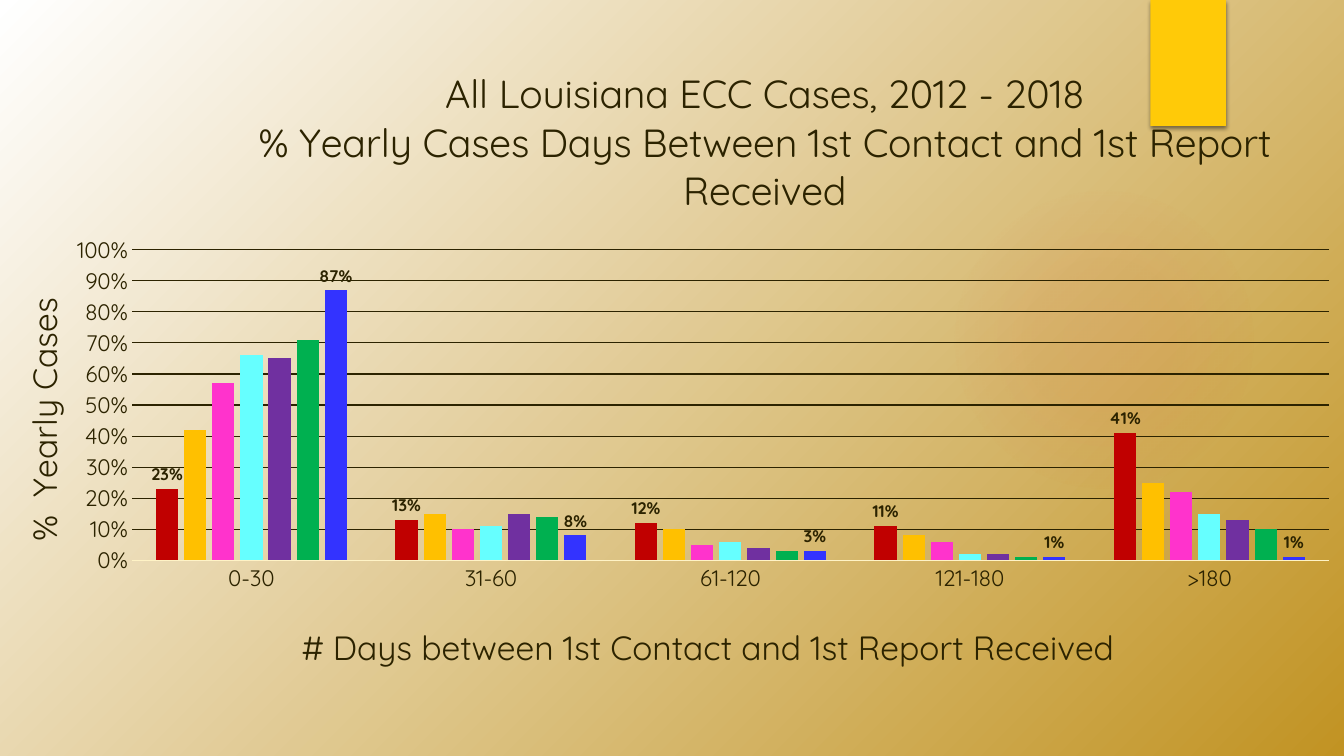
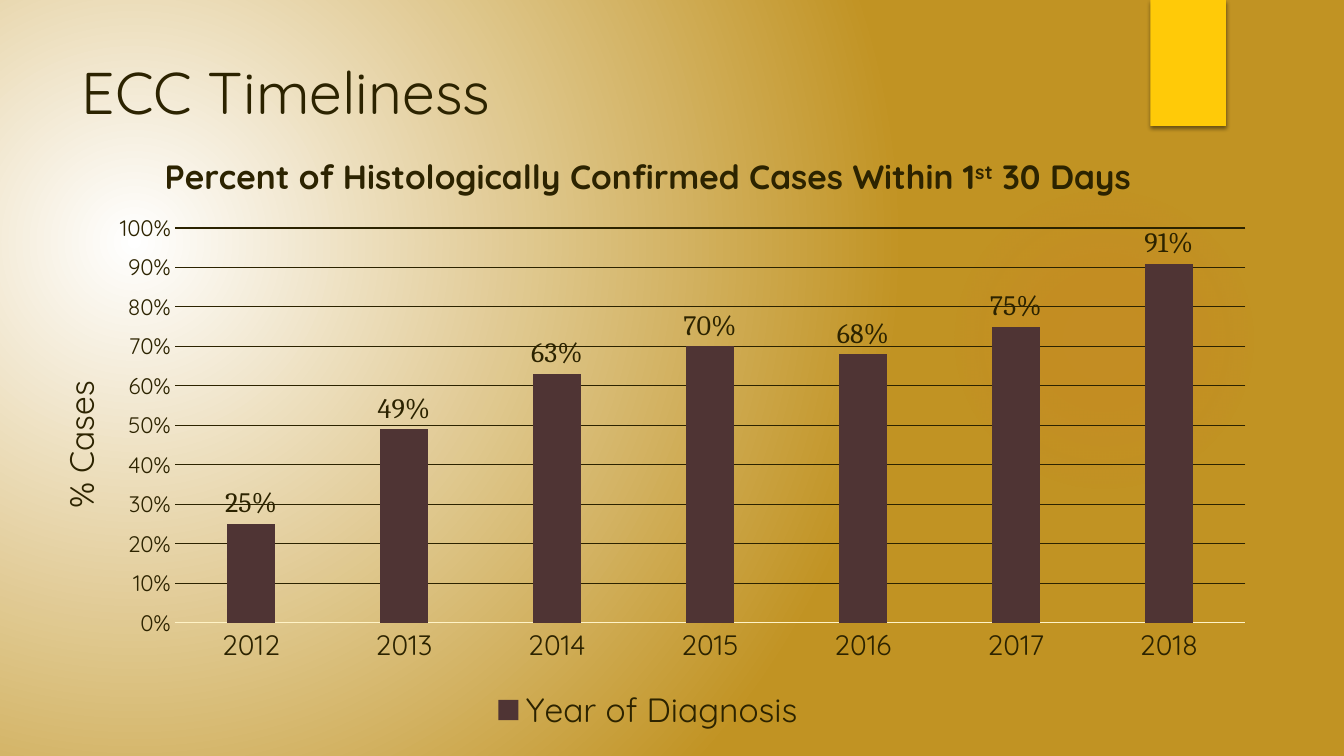
from dataclasses import dataclass
from typing import Optional

from lxml.etree import _Element
from pptx import Presentation
from pptx.chart.axis import _BaseAxis
from pptx.chart.data import CategoryChartData
from pptx.chart.series import BarSeries
from pptx.dml.color import RGBColor
from pptx.enum.chart import XL_CHART_TYPE, XL_LABEL_POSITION, XL_LEGEND_POSITION, XL_TICK_MARK
from pptx.enum.shapes import MSO_SHAPE
from pptx.enum.text import MSO_ANCHOR, PP_ALIGN
from pptx.oxml import parse_xml
from pptx.oxml.ns import nsdecls, qn
from pptx.slide import Slide
from pptx.text.text import Font, TextFrame
from pptx.util import Inches, Pt

FONT = "Quicksand"
LABEL_FONT = "Cambria"
INK = RGBColor(0x2C, 0x23, 0x00)
WHITE = RGBColor(0xFF, 0xFF, 0xFF)
GOLD = RGBColor(0xC1, 0x93, 0x23)
YELLOW = RGBColor(0xFF, 0xCA, 0x08)
GLOW = RGBColor(0xE6, 0x48, 0x23)
AXIS_LINE = RGBColor(0xFF, 0xF3, 0xC6)
BROWN = RGBColor(0x4F, 0x34, 0x34)
RED = RGBColor(0xC0, 0x00, 0x00)
AMBER = RGBColor(0xFF, 0xC0, 0x00)
PINK = RGBColor(0xFF, 0x33, 0xCC)
CYAN = RGBColor(0x66, 0xFF, 0xFF)
PURPLE = RGBColor(0x70, 0x30, 0xA0)
GREEN = RGBColor(0x00, 0xB0, 0x50)
BLUE = RGBColor(0x33, 0x33, 0xFF)

DIAGONAL = '<a:lin ang="2700000" scaled="0"/>'


@dataclass(frozen=True)
class Span:
    text: str
    superscript: bool = False


@dataclass(frozen=True)
class LabelStyle:
    size: int
    bold: bool = False
    font: str = FONT


@dataclass(frozen=True)
class YearSeries:
    name: str
    values: tuple[float, ...]
    color: RGBColor
    labels: Optional[LabelStyle] = None


@dataclass(frozen=True)
class Heading:
    """Lines of spans, with an optional top-left corner as chart fractions."""
    lines: tuple[tuple[Span, ...], ...]
    size: int = 24
    bold: bool = False
    corner: Optional[tuple[float, float]] = None


@dataclass(frozen=True)
class ColumnChart:
    frame: tuple[float, float, float, float]
    plot: tuple[float, float, float, float]
    categories: tuple[str, ...]
    series: tuple[YearSeries, ...]
    title: Heading
    value_title: Heading
    category_size: int
    category_title: Optional[Heading] = None
    legend_size: Optional[int] = None


BOLD_LABELS = LabelStyle(12, bold=True)
CONTACT_CHART = ColumnChart(
    frame=(0, 0.58, 13.33, 6.44),
    plot=(0.098, 0.295, 0.891, 0.478),
    categories=("0-30", "31-60", "61-120", "121-180", ">180"),
    series=(
        YearSeries("2012", (0.23, 0.13, 0.12, 0.11, 0.41), RED, BOLD_LABELS),
        YearSeries("2013", (0.42, 0.15, 0.1, 0.08, 0.25), AMBER),
        YearSeries("2014", (0.57, 0.1, 0.05, 0.06, 0.22), PINK),
        YearSeries("2015", (0.66, 0.11, 0.06, 0.02, 0.15), CYAN),
        YearSeries("2016", (0.65, 0.15, 0.04, 0.02, 0.13), PURPLE),
        YearSeries("2017", (0.71, 0.14, 0.03, 0.01, 0.1), GREEN),
        YearSeries("2018", (0.87, 0.08, 0.03, 0.01, 0.01), BLUE, BOLD_LABELS),
    ),
    title=Heading(
        ((Span("All Louisiana ECC Cases, 2012 - 2018"),),
         (Span("% Yearly Cases Days Between 1st Contact and 1st Report Received"),)),
        size=28, corner=(0.19, 0.01),
    ),
    value_title=Heading(((Span("%  Yearly Cases"),),), corner=(0.01, 0.36)),
    category_size=16,
    category_title=Heading(
        ((Span("# Days between 1st Contact and 1st Report Received"),),), corner=(0.22, 0.86)
    ),
)
TIMELINESS_CHART = ColumnChart(
    frame=(0.25, 1.32, 12.35, 6),
    plot=(0.12, 0.157, 0.86, 0.653),
    categories=tuple(str(year) for year in range(2012, 2019)),
    series=(
        YearSeries("Year of Diagnosis", (0.25, 0.49, 0.63, 0.7, 0.68, 0.75, 0.91),
                   BROWN, LabelStyle(20, font=LABEL_FONT)),
    ),
    title=Heading(
        ((Span("Percent of Histologically Confirmed Cases Within 1"),
          Span("st", superscript=True), Span(" 30 Days")),),
        bold=True,
    ),
    value_title=Heading(((Span("% Cases"),),), corner=(0.02, 0.4)),
    category_size=20,
    legend_size=24,
)


def circle_path(left: int, top: int, right: int, bottom: int) -> str:
    """Radial gradient whose focus is given by percent insets."""
    return (f'<a:path path="circle"><a:fillToRect l="{left * 1000}" t="{top * 1000}" '
            f'r="{right * 1000}" b="{bottom * 1000}"/></a:path>')


def gradient(stops: list[tuple[int, RGBColor, int]], direction: str) -> _Element:
    """Gradient fill from (position, colour, opacity) stops, in percent."""
    marks = "".join(
        f'<a:gs pos="{position * 1000}"><a:srgbClr val="{color}">'
        f'<a:alpha val="{opacity * 1000}"/></a:srgbClr></a:gs>'
        for position, color, opacity in stops
    )
    return parse_xml(f'<a:gradFill {nsdecls("a")} rotWithShape="1">'
                     f'<a:gsLst>{marks}</a:gsLst>{direction}</a:gradFill>')


def replace_solid_fill(parent: _Element, fill: _Element) -> None:
    parent.replace(parent.find(qn("a:solidFill")), fill)


def decorate(page: Slide, direction: str) -> None:
    """Draw the shared background, glow and yellow tab."""
    page.background.fill.solid()
    background = page._element.find(f".//{qn('p:bgPr')}")
    replace_solid_fill(background, gradient([(0, WHITE, 100), (100, GOLD, 100)], direction))

    glow = page.shapes.add_shape(
        MSO_SHAPE.OVAL, Inches(9.41), Inches(1.83), Inches(3.08), Inches(3.08))
    glow.shadow.inherit = False
    glow.line.fill.background()
    glow.fill.solid()
    glow_stops = [(0, GLOW, 7), (36, GLOW, 6), (69, GLOW, 0)]
    replace_solid_fill(glow._element.spPr, gradient(glow_stops, circle_path(50, 50, 50, 50)))

    tab = page.shapes.add_shape(
        MSO_SHAPE.RECTANGLE, Inches(11.41), Inches(0), Inches(0.75), Inches(1.25))
    tab.shadow.inherit = False
    tab.line.fill.background()
    tab.fill.solid()
    tab.fill.fore_color.rgb = YELLOW
    tab._element.spPr.find(qn("a:effectLst")).append(parse_xml(
        f'<a:outerShdw {nsdecls("a")} blurRad="{Pt(3)}" dist="{Pt(2)}" dir="5400000" '
        'algn="t" rotWithShape="0"><a:srgbClr val="000000"><a:alpha val="45000"/>'
        '</a:srgbClr></a:outerShdw>'))


def style_font(font: Font, size: int, bold: bool = False, name: str = FONT) -> None:
    font.name = name
    font.size = Pt(size)
    font.bold = bold
    font.color.rgb = INK


def set_layout(element: _Element, *fractions: float, inner: bool = False) -> None:
    """Fix a chart part at x, y and optionally width, height."""
    old = element.find(qn("c:layout"))
    if old is not None:
        element.remove(old)
    target = '<c:layoutTarget val="inner"/>' if inner else ""
    modes = '<c:xMode val="edge"/><c:yMode val="edge"/>'
    values = "".join(f'<c:{key} val="{value}"/>' for key, value in zip("xywh", fractions))
    layout = parse_xml(f'<c:layout {nsdecls("c")}><c:manualLayout>{target}{modes}{values}'
                       '</c:manualLayout></c:layout>')
    element.insert(0 if element.find(qn("c:tx")) is None else 1, layout)


def write_heading(frame: TextFrame, element: _Element, heading: Heading) -> None:
    for index, line in enumerate(heading.lines):
        para = frame.add_paragraph() if index else frame.paragraphs[0]
        style_font(para.font, heading.size, heading.bold)
        for span in line:
            run = para.add_run()
            run.text = span.text
            style_font(run.font, heading.size, heading.bold)
            if span.superscript:
                run._r.get_or_add_rPr().set("baseline", "30000")
    if heading.corner:
        set_layout(element, *heading.corner)


def style_axis(axis: _BaseAxis, size: int, heading: Optional[Heading]) -> None:
    axis.major_tick_mark = axis.minor_tick_mark = XL_TICK_MARK.NONE
    style_font(axis.tick_labels.font, size)
    axis.has_title = heading is not None
    if heading:
        title = axis.axis_title
        write_heading(title.text_frame, title._element, heading)


def style_series(series: BarSeries, spec_row: YearSeries) -> None:
    series.format.fill.solid()
    series.format.fill.fore_color.rgb = spec_row.color
    series.invert_if_negative = False
    if spec_row.labels:
        labels = series.data_labels
        labels.show_value = True
        labels.number_format = "0%"
        labels.number_format_is_linked = False
        labels.position = XL_LABEL_POSITION.OUTSIDE_END
        style_font(labels.font, spec_row.labels.size, spec_row.labels.bold, spec_row.labels.font)


def add_column_chart(page: Slide, content: ColumnChart) -> None:
    data = CategoryChartData(number_format="0%")
    data.categories = content.categories
    for row in content.series:
        data.add_series(row.name, row.values)
    frame = map(Inches, content.frame)
    chart = page.shapes.add_chart(XL_CHART_TYPE.COLUMN_CLUSTERED, *frame, data).chart
    style_font(chart.font, 10)

    chart.has_title = True
    write_heading(chart.chart_title.text_frame, chart.chart_title._element, content.title)
    chart.has_legend = content.legend_size is not None
    if content.legend_size:
        chart.legend.position = XL_LEGEND_POSITION.BOTTOM
        chart.legend.include_in_layout = False
        style_font(chart.legend.font, content.legend_size)

    style_axis(chart.category_axis, content.category_size, content.category_title)
    chart.category_axis.format.line.color.rgb = AXIS_LINE
    chart.category_axis.format.line.width = Pt(0.75)

    values = chart.value_axis
    style_axis(values, 16, content.value_title)
    rotation = values.axis_title.text_frame._txBody.find(qn("a:bodyPr"))
    rotation.set("rot", "-5400000")
    rotation.set("vert", "horz")
    values.minimum_scale, values.maximum_scale, values.major_unit = 0, 1, 0.1
    values.tick_labels.number_format = "0%"
    values.tick_labels.number_format_is_linked = False
    values.format.line.fill.background()
    values.major_gridlines.format.line.color.rgb = INK
    values.major_gridlines.format.line.width = Pt(0.75)

    plot = chart.plots[0]
    plot.gap_width, plot.overlap = 219, -27
    plot.vary_by_categories = False
    for series, row in zip(plot.series, content.series):
        style_series(series, row)
    set_layout(chart._chartSpace.chart.plotArea, *content.plot, inner=True)


def write_title(page: Slide, text: str) -> None:
    title = page.shapes.title
    title.left, title.top = Inches(0.71), Inches(0.5)
    title.width, title.height = Inches(10.29), Inches(1.53)
    title.text_frame.vertical_anchor = MSO_ANCHOR.TOP
    para = title.text_frame.paragraphs[0]
    para.alignment = PP_ALIGN.LEFT
    run = para.add_run()
    run.text = text
    style_font(run.font, 42)


def main() -> None:
    deck = Presentation()
    deck.slide_width, deck.slide_height = Inches(13.33), Inches(7.5)
    title_only, blank = deck.slide_layouts[5], deck.slide_layouts[6]

    contact_page = deck.slides.add_slide(blank)
    decorate(contact_page, DIAGONAL)
    add_column_chart(contact_page, CONTACT_CHART)

    timeliness_page = deck.slides.add_slide(title_only)
    decorate(timeliness_page, circle_path(45, 65, 125, 100))
    write_title(timeliness_page, "ECC Timeliness")
    add_column_chart(timeliness_page, TIMELINESS_CHART)

    deck.save("out.pptx")


if __name__ == "__main__":
    main()
